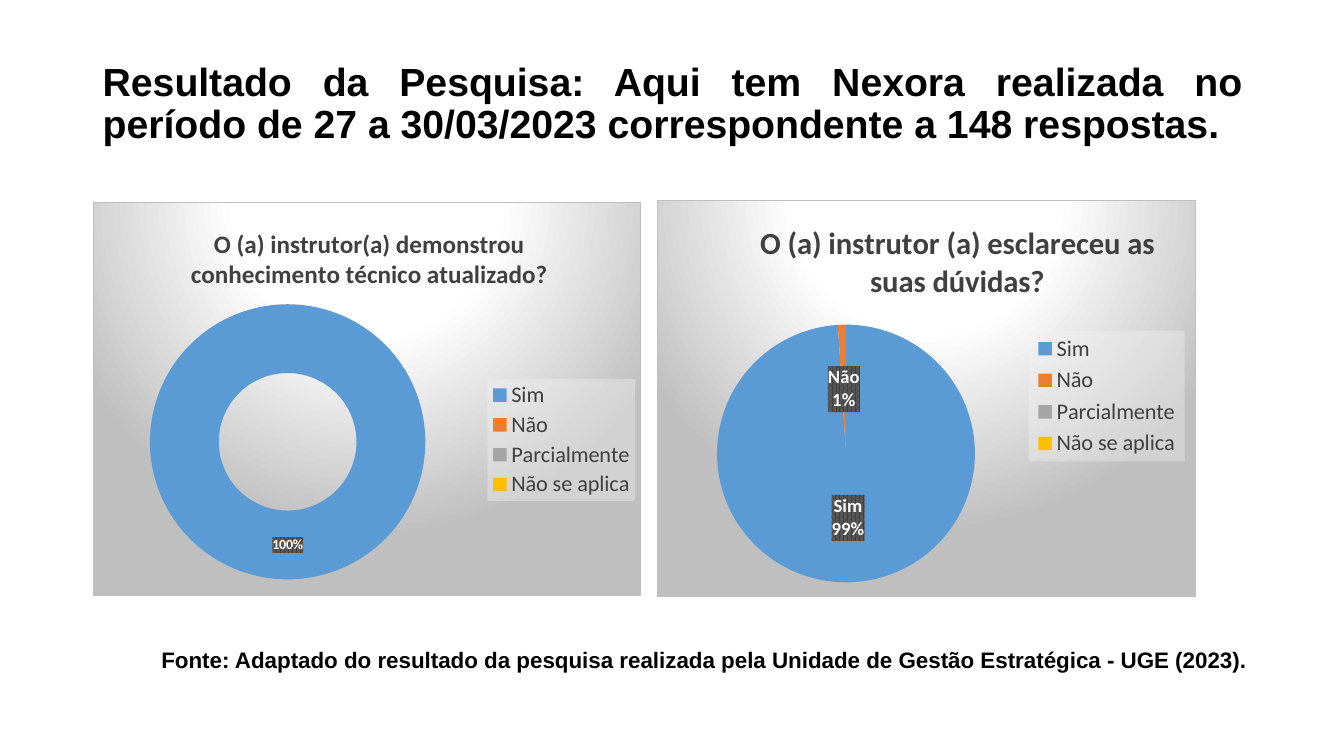
from lxml import etree
from pptx import Presentation
from pptx.chart.data import CategoryChartData
from pptx.dml.color import RGBColor
from pptx.enum.chart import XL_CHART_TYPE as ChartType, XL_LABEL_POSITION as LabelPosition
from pptx.enum.chart import XL_LEGEND_POSITION as LegendPosition
from pptx.enum.text import MSO_ANCHOR as Anchor, PP_ALIGN as Align
from pptx.oxml import parse_xml
from pptx.oxml.ns import qn
from pptx.util import Inches, Pt

COLORS = {
    "text": "000000", "chart_text": "404040", "label": "FFFFFF",
    "label_fill": "404040", "label_stripe": "595959", "legend_fill": "F2F2F2",
    "light": "FFFFFF", "gray": "BFBFBF",
}
SLICES = ["5B9BD5", "ED7D31", "A5A5A5", "FFC000"]
ANSWERS = ["Sim", "Não", "Parcialmente", "Não se aplica"]
NAMESPACES = (
    'xmlns:c="http://schemas.openxmlformats.org/drawingml/2006/chart" '
    'xmlns:a="http://schemas.openxmlformats.org/drawingml/2006/main"'
)
PANEL_FILL = (
    '<a:gradFill><a:gsLst>'
    + "".join(
        f'<a:gs pos="{stop * 1000}"><a:srgbClr val="{COLORS[color]}"/></a:gs>'
        for stop, color in [(0, "light"), (39, "light"), (100, "gray")]
    )
    + '</a:gsLst><a:path path="circle">'
    '<a:fillToRect l="50000" t="-80000" r="50000" b="180000"/></a:path></a:gradFill>'
    f'<a:ln w="9525"><a:solidFill><a:srgbClr val="{COLORS["gray"]}"/></a:solidFill></a:ln>'
)
LEGEND_FILL = (
    f'<a:solidFill><a:srgbClr val="{COLORS["legend_fill"]}">'
    '<a:alpha val="39000"/></a:srgbClr></a:solidFill>'
)
LABEL_FILL = (
    f'<a:pattFill prst="pct75"><a:fgClr><a:srgbClr val="{COLORS["label_fill"]}"/></a:fgClr>'
    f'<a:bgClr><a:srgbClr val="{COLORS["label_stripe"]}"/></a:bgClr></a:pattFill>'
)


def shape_properties(content):
    """Return a chart spPr element with the given fill and line."""
    return parse_xml(f"<c:spPr {NAMESPACES}>{content}</c:spPr>")


def style_font(font, size, color, name="Calibri", bold=False):
    """Set face, size, weight and colour of a font."""
    font.name, font.size, font.bold = name, Pt(size), bold
    font.color.rgb = RGBColor.from_string(COLORS[color])


def set_layout(element, previous_tag, box):
    """Place a chart part at (x, y[, w, h]) shares of its chart."""
    for old in element.findall(qn("c:layout")):
        element.remove(old)
    modes = '<c:xMode val="edge"/><c:yMode val="edge"/>'
    values = "".join(f'<c:{key} val="{share}"/>' for key, share in zip("xywh", box))
    target = '<c:layoutTarget val="inner"/>' if previous_tag is None else ""
    layout = parse_xml(
        f"<c:layout {NAMESPACES}><c:manualLayout>{target}{modes}{values}"
        "</c:manualLayout></c:layout>"
    )
    if previous_tag is None:
        element.insert(0, layout)
    else:
        element.find(qn(previous_tag)).addnext(layout)


def add_labels(series, values, size, with_category):
    """Label the nonempty slices with white text on a dark box."""
    labels = series.data_labels
    labels.number_format, labels.number_format_is_linked = "0%", False
    labels.show_percentage, labels.show_value = True, False
    labels.show_category_name = with_category
    style_font(labels.font, size, "label", bold=True)
    element = series.format and labels._element
    element.find(qn("c:txPr")).addprevious(shape_properties(LABEL_FILL))
    if with_category:
        labels.position = LabelPosition.CENTER
        flag = element.find(qn("c:showBubbleSize"))
        if flag is None:
            flag = element.find(qn("c:showPercent"))
        separator = etree.Element(qn("c:separator"))
        separator.text = "\n"
        flag.addnext(separator)
    empty = [index for index, value in enumerate(values) if value == 0]
    for place, index in enumerate(empty):
        element.insert(place, parse_xml(
            f'<c:dLbl {NAMESPACES}><c:idx val="{index}"/><c:delete val="1"/></c:dLbl>'
        ))


def add_survey_chart(slide, box, kind, question, title_size, values, label_size, layouts):
    """Add one survey question as a round chart on a shaded panel."""
    data = CategoryChartData()
    data.categories = ANSWERS
    data.add_series("Respostas", values)
    chart = slide.shapes.add_chart(kind, *box, data).chart
    style_font(chart.font, 10, "text")
    chart.element.find(qn("c:chart")).addnext(shape_properties(PANEL_FILL))

    chart.has_title = True
    title = chart.chart_title
    title.text_frame.text = question
    style_font(title.text_frame.paragraphs[0].runs[0].font, title_size, "chart_text", bold=True)
    set_layout(title._element, "c:tx", layouts["title"])

    chart.has_legend = True
    legend = chart.legend
    legend.position, legend.include_in_layout = LegendPosition.RIGHT, False
    style_font(legend.font, 16, "chart_text")
    set_layout(legend._element, "c:legendPos", layouts["legend"])
    legend._element.find(qn("c:txPr")).addprevious(shape_properties(LEGEND_FILL))

    plot = chart.plots[0]
    plot.vary_by_categories = True
    set_layout(chart.element.find(qn("c:chart")).find(qn("c:plotArea")), None, layouts["plot"])
    series = plot.series[0]
    for index, color in enumerate(SLICES):
        fill = series.points[index].format.fill
        fill.solid()
        fill.fore_color.rgb = RGBColor.from_string(color)
    add_labels(series, values, label_size, kind == ChartType.PIE)


def add_text(slide, box, text, size, align, spacing, anchor):
    """Add a bold paragraph in the given box."""
    frame = slide.shapes.add_textbox(*box).text_frame
    frame.word_wrap, frame.vertical_anchor = True, anchor
    frame.text = text
    paragraph = frame.paragraphs[0]
    paragraph.alignment, paragraph.line_spacing = align, spacing
    style_font(paragraph.runs[0].font, size, "text", "Arial", True)


def build_survey_slide(presentation):
    """Add the survey slide: heading, two charts and the source line."""
    slide = presentation.slides.add_slide(presentation.slide_layouts[6])

    def inches(*lengths):
        return [Inches(length) for length in lengths]

    add_text(
        slide, inches(0.92, 0.4, 11.5, 1.28),
        "Resultado da Pesquisa: Aqui tem Nexora realizada no período de 27 a 30/03/2023 "
        "correspondente a 148 respostas.",
        28, Align.JUSTIFY, 0.9, Anchor.MIDDLE,
    )
    add_survey_chart(
        slide, inches(0.92, 2, 5.44, 3.91), ChartType.DOUGHNUT,
        "O (a) instrutor(a) demonstrou conhecimento técnico atualizado?", 18,
        [100, 0, 0, 0], 10,
        {"title": (0.17, 0.05), "plot": (0.1, 0.26, 0.51, 0.7),
         "legend": (0.72, 0.45, 0.27, 0.31)},
    )
    add_text(
        slide, inches(0.64, 6.34, 12.69, 0.37),
        "Fonte: Adaptado do resultado da pesquisa realizada pela Unidade de Gestão "
        "Estratégica - UGE (2023).",
        16, Align.CENTER, 1.07, Anchor.TOP,
    )
    add_survey_chart(
        slide, inches(6.52, 1.98, 5.34, 3.94), ChartType.PIE,
        "O (a) instrutor (a) esclareceu as suas dúvidas?", 22,
        [99, 1, 0, 0], 13.3,
        {"title": (0.18, 0.04), "plot": (0.11, 0.31, 0.48, 0.66),
         "legend": (0.69, 0.33, 0.29, 0.33)},
    )


def main():
    """Build and save the presentation."""
    presentation = Presentation()
    presentation.slide_width, presentation.slide_height = Inches(13.33), Inches(7.5)
    build_survey_slide(presentation)
    presentation.save("out.pptx")


if __name__ == "__main__":
    main()
